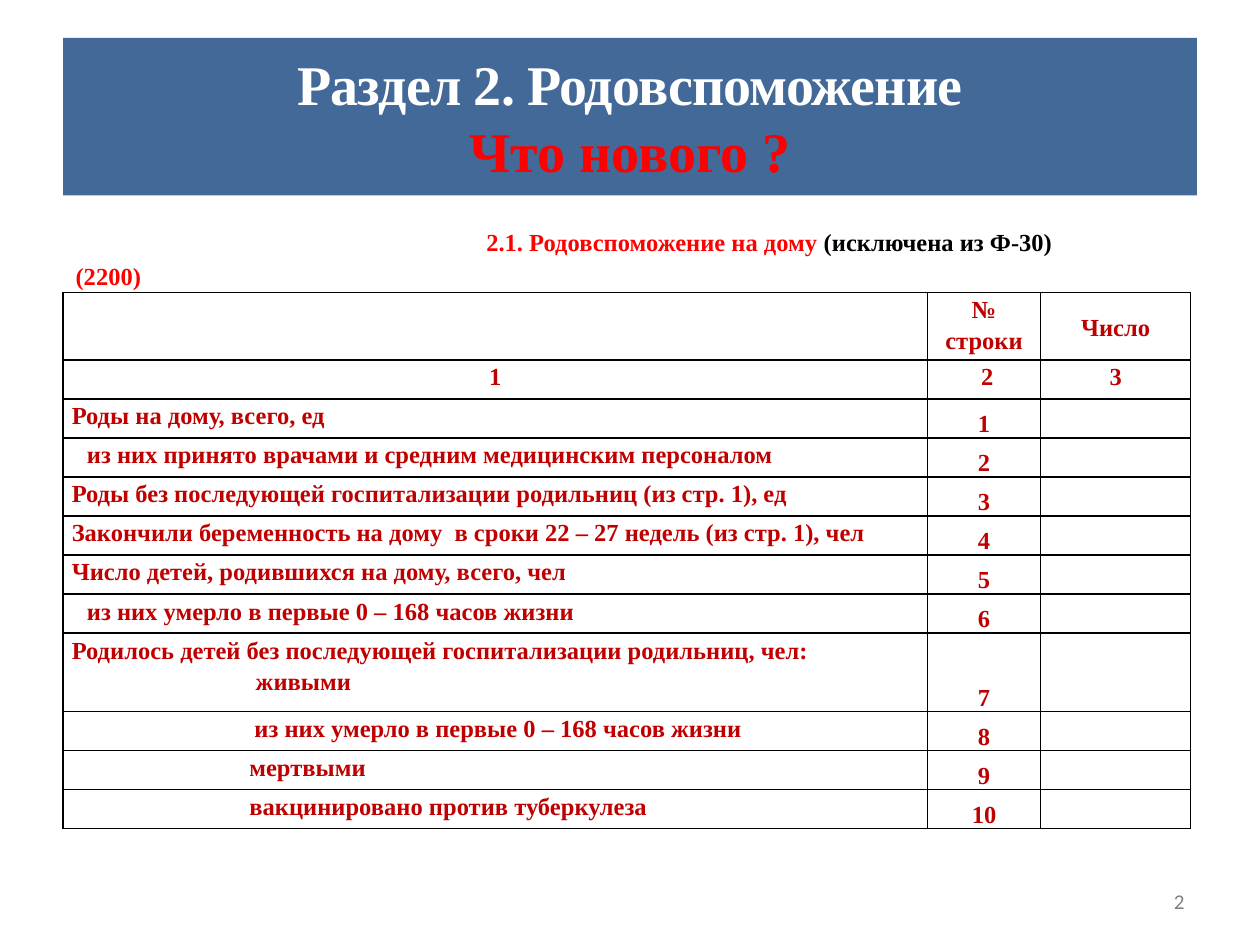
from lxml import etree
from pptx import Presentation
from pptx.dml.color import RGBColor
from pptx.enum.text import MSO_ANCHOR, MSO_AUTO_SIZE, PP_ALIGN
from pptx.oxml.ns import qn
from pptx.util import Inches, Pt

LEFT, CENTER, RIGHT = PP_ALIGN.LEFT, PP_ALIGN.CENTER, PP_ALIGN.RIGHT
TOP, MIDDLE, BOTTOM = MSO_ANCHOR.TOP, MSO_ANCHOR.MIDDLE, MSO_ANCHOR.BOTTOM
SERIF = "Times New Roman"
WHITE, BLACK, RED, DARK_RED = "FFFFFF", "000000", "FF0000", "C00000"
BLUE, GRAY = "426997", "808080"

COLUMN_WIDTHS = [6.86, 0.9, 1.19]
HEADER_HEIGHT, LINE_HEIGHT = 0.49, 0.31
# Each row holds its lines as (left indent, text)
ROWS = [
    [(0, "Роды на дому, всего, ед")],
    [(0.12, "из них принято врачами и средним медицинским персоналом")],
    [(0, "Роды без последующей госпитализации родильниц (из стр. 1), ед")],
    [(0, "Закончили беременность на дому  в сроки 22 – 27 недель (из стр. 1), чел")],
    [(0, "Число детей, родившихся на дому, всего, чел")],
    [(0.12, "из них умерло в первые 0 – 168 часов жизни")],
    [(0, "Родилось детей без последующей госпитализации родильниц, чел:"),
     (1.46, "живыми")],
    [(1.45, "из них умерло в первые 0 – 168 часов жизни")],
    [(1.41, "мертвыми")],
    [(1.41, "вакцинировано против туберкулеза")],
]


def color(hex_value):
    return RGBColor.from_string(hex_value)


def place(shape, box):
    shape.left, shape.top, shape.width, shape.height = map(Inches, box)


def style(font, size, hex_value, name=SERIF, bold=True):
    font.size, font.name, font.bold = Pt(size), name, bold
    font.color.rgb = color(hex_value)


def indent(paragraph, left):
    properties = paragraph._p.get_or_add_pPr()
    properties.set("marL", str(Inches(left)))
    properties.set("indent", "0")
    return properties


def add_title(slide, box):
    title = slide.shapes.title
    place(title, box)
    title.fill.solid()
    title.fill.fore_color.rgb = color(BLUE)
    frame = title.text_frame
    frame.auto_size, frame.vertical_anchor = MSO_AUTO_SIZE.NONE, MIDDLE
    paragraph = frame.paragraphs[0]
    paragraph.alignment = CENTER
    style(paragraph.font, 32, WHITE)
    heading = paragraph.add_run()
    heading.text = "Раздел 2. Родовспоможение"
    style(heading.font, 32, WHITE)
    heading.font._element.set("spc", "-50")
    paragraph.add_line_break()
    question = paragraph.add_run()
    question.text = "Что нового ?"
    style(question.font, 32, RED)


def add_caption(slide, box):
    body = slide.placeholders[1]
    place(body, box)
    frame = body.text_frame
    frame.auto_size = MSO_AUTO_SIZE.NONE
    lines = [
        (3.26, [("2.1. Родовспоможение на дому ", RED),
                ("(исключена из Ф-30)", BLACK)]),
        (0, [("(2200)", RED)]),
    ]
    for index, (left, parts) in enumerate(lines):
        paragraph = frame.add_paragraph() if index else frame.paragraphs[0]
        paragraph.space_before = Pt(2.8)
        etree.SubElement(indent(paragraph, left), qn("a:buNone"))
        for text, hex_value in parts:
            run = paragraph.add_run()
            run.text = text
            style(run.font, 14, hex_value)


def add_borders(cell):
    properties = cell._tc.get_or_add_tcPr()
    for side in ("lnL", "lnR", "lnT", "lnB"):
        line = etree.SubElement(properties, qn(f"a:{side}"), w=str(Pt(1)))
        fill = etree.SubElement(line, qn("a:solidFill"))
        etree.SubElement(fill, qn("a:srgbClr"), val=BLACK)


def fill_cell(cell, lines=((0, ""),), alignment=CENTER, anchor=TOP):
    add_borders(cell)
    cell.fill.background()
    cell.margin_left = cell.margin_right = Inches(0.07)
    cell.margin_top = cell.margin_bottom = 0
    cell.vertical_anchor = anchor
    for index, (left, text) in enumerate(lines):
        frame = cell.text_frame
        paragraph = frame.add_paragraph() if index else frame.paragraphs[0]
        paragraph.text = text
        paragraph.alignment, paragraph.line_spacing = alignment, 1.15
        indent(paragraph, left)
        style(paragraph.font, 14, DARK_RED)


def add_births_table(slide, left, top):
    heights = [HEADER_HEIGHT, LINE_HEIGHT]
    heights += [LINE_HEIGHT * len(lines) for lines in ROWS]
    box = map(Inches, (left, top, sum(COLUMN_WIDTHS), sum(heights)))
    table = slide.shapes.add_table(len(heights), len(COLUMN_WIDTHS), *box).table
    table.first_row = table.horz_banding = False
    for column, width in zip(table.columns, COLUMN_WIDTHS):
        column.width = Inches(width)
    for row, height in zip(table.rows, heights):
        row.height = Inches(height)

    # Header and column numbers
    fill_cell(table.cell(0, 0))
    fill_cell(table.cell(0, 1), [(0, "№\vстроки")])
    fill_cell(table.cell(0, 2), [(0, "Число")], anchor=MIDDLE)
    for column, left_indent in enumerate((0, 0.05, 0)):
        fill_cell(table.cell(1, column), [(left_indent, str(column + 1))])

    # Numbered rows with an empty value column
    for number, lines in enumerate(ROWS, start=1):
        name, row_number, value = table.rows[number + 1].cells
        fill_cell(name, lines, LEFT)
        fill_cell(row_number, [(0, str(number))], anchor=BOTTOM)
        fill_cell(value)


def add_page_number(slide, box):
    frame = slide.shapes.add_textbox(*map(Inches, box)).text_frame
    frame.word_wrap, frame.vertical_anchor = True, MIDDLE
    paragraph = frame.paragraphs[0]
    paragraph.text, paragraph.alignment = "2", RIGHT
    style(paragraph.font, 12, GRAY, "Calibri", False)


def main():
    presentation = Presentation()
    presentation.slide_width, presentation.slide_height = Inches(10), Inches(7.5)
    slide = presentation.slides.add_slide(presentation.slide_layouts[1])
    add_title(slide, (0.5, 0.3, 9, 1.25))
    add_caption(slide, (0.5, 1.75, 9, 4.95))
    add_page_number(slide, (7.17, 6.95, 2.33, 0.4))
    add_births_table(slide, 0.5, 2.32)
    presentation.save("out.pptx")


if __name__ == "__main__":
    main()
